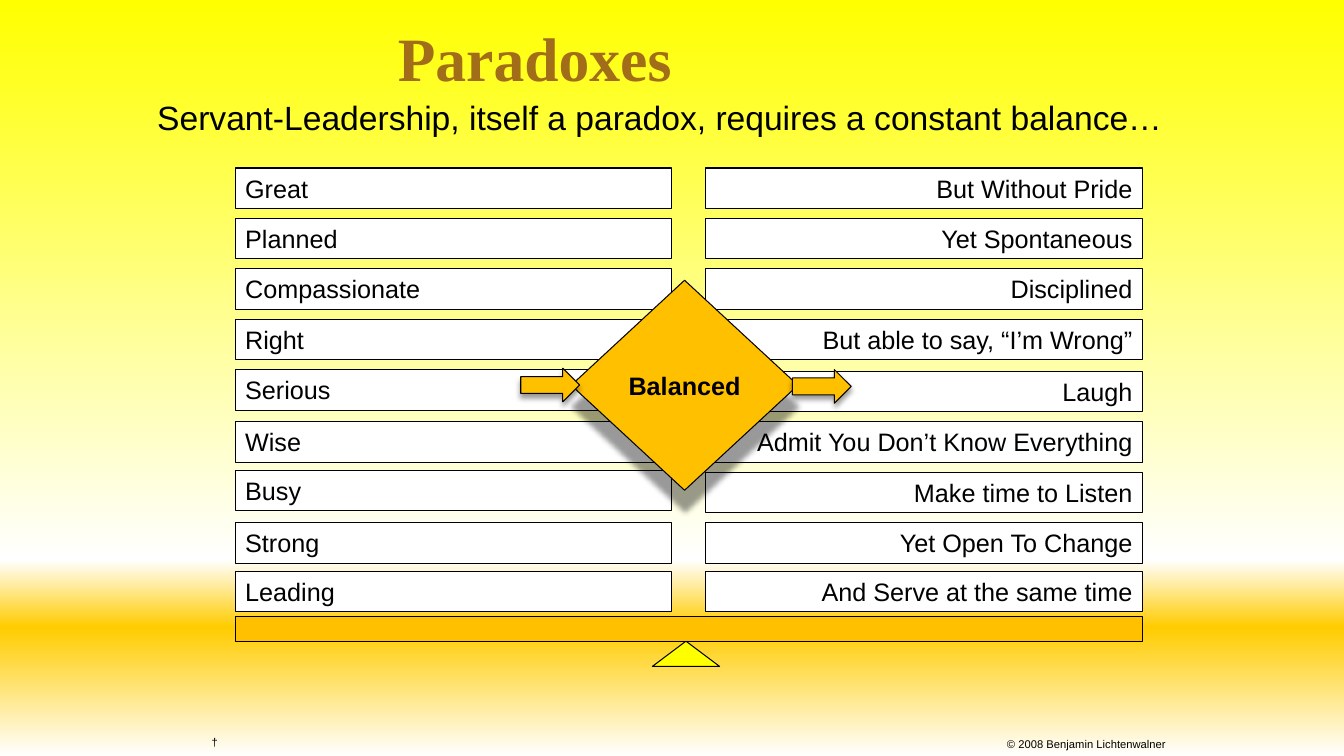
from lxml import etree
from pptx import Presentation
from pptx.dml.color import RGBColor
from pptx.enum import shapes, text
from pptx.oxml.ns import qn
from pptx.util import Pt

BLACK = RGBColor(0, 0, 0)
WHITE = RGBColor(255, 255, 255)
YELLOW = RGBColor(255, 255, 0)
GOLD = RGBColor(255, 204, 0)
AMBER = RGBColor(255, 192, 0)
BROWN = RGBColor(162, 109, 24)

LEFT, CENTER, RIGHT = text.PP_ALIGN.LEFT, text.PP_ALIGN.CENTER, text.PP_ALIGN.RIGHT
TOP, MIDDLE = text.MSO_ANCHOR.TOP, text.MSO_ANCHOR.MIDDLE
SHAPE = shapes.MSO_SHAPE

PAIRS = [
    ("Great", "But Without Pride"),
    ("Planned", "Yet Spontaneous"),
    ("Compassionate", "Disciplined"),
    ("Right", "But able to say, “I’m Wrong”"),
    ("Serious", "Laugh"),
    ("Wise", "Admit You Don’t Know Everything"),
    ("Busy", "Make time to Listen"),
    ("Strong", "Yet Open To Change"),
    ("Leading", "And Serve at the same time"),
]
LOWERED = {"Laugh", "Wise", "Admit You Don’t Know Everything",
           "Make time to Listen", "Strong", "Yet Open To Change"}


def write(shape, words, size=18, font="Arial", color=BLACK, bold=False,
          align=LEFT, anchor=TOP, wrap=True):
    frame = shape.text_frame
    frame.word_wrap = wrap
    frame.vertical_anchor = anchor
    paragraph = frame.paragraphs[0]
    paragraph.alignment = align
    run = paragraph.add_run()
    run.text = words
    run.font.size = Pt(size)
    run.font.name = font
    run.font.bold = bold
    run.font.color.rgb = color


def add_block(kind, left, top, width, height, fill, shadow_distance=0):
    """Add an outlined shape, with a soft shadow below it if a distance is given."""
    shape = slide.shapes.add_shape(kind, Pt(left), Pt(top), Pt(width), Pt(height))
    shape.fill.solid()
    shape.fill.fore_color.rgb = fill
    shape.line.color.rgb = BLACK
    shape.line.width = Pt(0.75)
    shape.shadow.inherit = False
    if shadow_distance:
        effects = shape._element.spPr.find(qn("a:effectLst"))
        shadow = etree.SubElement(effects, qn("a:outerShdw"), blurRad=str(Pt(4)),
                                  dist=str(Pt(shadow_distance)), dir="5400000",
                                  rotWithShape="0")
        color = etree.SubElement(shadow, qn("a:srgbClr"), val=str(BLACK))
        etree.SubElement(color, qn("a:alpha"), val="40000")
    return shape


presentation = Presentation()
presentation.slide_width = Pt(960)
presentation.slide_height = Pt(540)
slide = presentation.slides.add_slide(presentation.slide_layouts[5])

# Background gradient, top to bottom
background = slide.background.fill
background.gradient()
background.gradient_angle = 270
stops = slide.element.find(".//" + qn("a:gsLst"))
for stop in list(stops):
    stops.remove(stop)
for position, color in [(0, YELLOW), (74, WHITE), (83, GOLD), (100, WHITE)]:
    stop = etree.SubElement(stops, qn("a:gs"), pos=str(position * 1000))
    etree.SubElement(stop, qn("a:srgbClr"), val=str(color))

# Title
title = slide.shapes.title
title.left, title.top, title.width, title.height = Pt(277), Pt(10.5), Pt(212), Pt(60)
write(title, "Paradoxes", size=44, font="Times New Roman", color=BROWN, bold=True,
      wrap=False)

# Subtitle and footer
for left, top, width, height, words, size, align in [
    (105.2, 66, 757, 36,
     "Servant-Leadership, itself a paradox, requires a constant balance…", 24, LEFT),
    (144, 522, 54, 17, "†", 8, LEFT),
    (612, 523, 228, 17, "© 2008 Benjamin Lichtenwalner", 8, RIGHT),
]:
    box = slide.shapes.add_textbox(Pt(left), Pt(top), Pt(width), Pt(height))
    write(box, words, size=size, align=align)

# Scale: pivot and beam
add_block(SHAPE.ISOSCELES_TRIANGLE, 466, 458, 48, 18, YELLOW)
add_block(SHAPE.RECTANGLE, 168, 440.2, 648, 18, AMBER)

# Paired statements
for row, pair in enumerate(PAIRS):
    for words, left, align in zip(pair, (168, 504), (LEFT, RIGHT)):
        top = 120 + 36 * row + (1.2 if words in LOWERED else 0)
        statement = add_block(SHAPE.RECTANGLE, left, top, 312, 29, WHITE)
        write(statement, words, align=align)

# Balance in the middle
diamond = add_block(SHAPE.DIAMOND, 408, 200.2, 162, 150, AMBER, shadow_distance=15)
frame = diamond.text_frame
frame.margin_left = frame.margin_right = frame.margin_top = frame.margin_bottom = 0
write(diamond, "Balanced", bold=True, align=CENTER, anchor=MIDDLE, wrap=False)
for left, top in [(372, 263), (566, 264)]:
    add_block(SHAPE.RIGHT_ARROW, left, top, 42, 24, AMBER, shadow_distance=3)

presentation.save("out.pptx")
